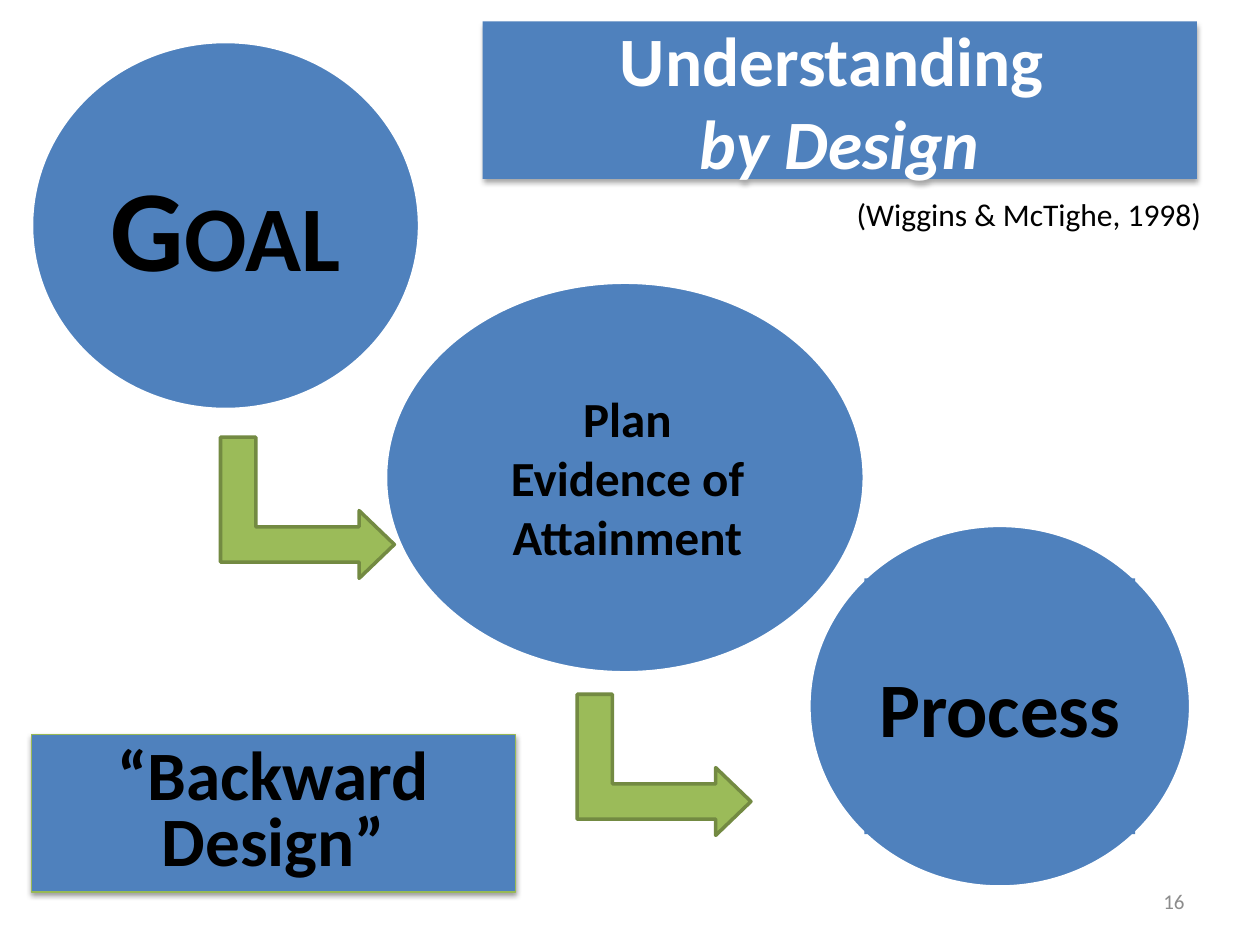
from dataclasses import dataclass
from typing import Optional

from lxml.etree import SubElement
from pptx import Presentation
from pptx.dml.color import RGBColor
from pptx.enum.shapes import MSO_SHAPE
from pptx.enum.text import MSO_ANCHOR, PP_ALIGN
from pptx.oxml.ns import qn
from pptx.util import Inches, Pt


@dataclass(frozen=True)
class Theme:
    font: str = "Calibri"
    blue: str = "4F81BD"
    green: str = "9BBB59"
    edge: str = "738A42"
    rim: str = "98B955"
    white: str = "FFFFFF"
    black: str = "000000"
    gray: str = "8C8C8C"
    goal: float = 66
    step: float = 44
    plan: float = 28
    head: float = 39.6
    cite: float = 18
    page: float = 12


@dataclass(frozen=True)
class Box:
    left: float
    top: float
    width: float
    height: float

    def place(self) -> tuple:
        return tuple(Inches(n) for n in
                     (self.left, self.top, self.width, self.height))


@dataclass(frozen=True)
class Run:
    text: str
    size: float
    color: str = "000000"
    bold: bool = True
    italic: bool = False
    small: bool = False


@dataclass(frozen=True)
class Stage:
    disc: Box
    label: Box
    lines: list
    filled: bool = True


THEME = Theme()
STAGES = [
    Stage(Box(0.25, 0.33, 3.08, 2.92), Box(0.7, 0.76, 2.18, 2.06),
          [[Run("Goal", THEME.goal, small=True)]], filled=False),
    Stage(Box(6.42, 4.17, 3.03, 2.87), Box(6.86, 4.59, 2.15, 2.03),
          [[Run("Process", THEME.step)]]),
    Stage(Box(3.06, 2.24, 3.8, 3.1), Box(3.68, 2.77, 2.6, 2.03),
          [[Run(line, THEME.plan)]
           for line in ("Plan", "Evidence of", "Attainment")]),
]
ARROWS = [Box(1.88, 3.34, 1.12, 1.38), Box(4.71, 5.38, 1.12, 1.38)]


def add_shape(slide, kind, box: Box, fill: Optional[str],
              line: Optional[str] = None, weight: float = 2):
    shape = slide.shapes.add_shape(kind, *box.place())
    shape.shadow.inherit = False
    if fill:
        shape.fill.solid()
        shape.fill.fore_color.rgb = RGBColor.from_string(fill)
    else:
        shape.fill.background()
    if line:
        shape.line.color.rgb = RGBColor.from_string(line)
        shape.line.width = Pt(weight)
    else:
        shape.line.fill.background()
    return shape


def add_shadow(shape, alpha: int, dist: float) -> None:
    """Cast a soft black shadow straight down."""
    effects = shape._element.spPr.find(qn("a:effectLst"))
    outer = SubElement(effects, qn("a:outerShdw"), blurRad=str(Pt(3.1)),
                       dist=str(Pt(dist)), dir="5400000", rotWithShape="0")
    color = SubElement(outer, qn("a:srgbClr"), val=THEME.black)
    SubElement(color, qn("a:alpha"), val=str(alpha * 1000))


def write(shape, lines: list, align=PP_ALIGN.CENTER,
          anchor=MSO_ANCHOR.MIDDLE, inset: Optional[float] = None,
          wrap: bool = True, space: Optional[float] = None) -> None:
    """Fill a shape with paragraphs, each a list of runs."""
    frame = shape.text_frame
    frame.word_wrap = wrap
    frame.vertical_anchor = anchor
    if inset is not None:
        frame.margin_left = frame.margin_right = Inches(inset)
        frame.margin_top = frame.margin_bottom = Inches(inset)
    for i, runs in enumerate(lines):
        para = frame.add_paragraph() if i else frame.paragraphs[0]
        para.alignment = align
        if space:
            para.line_spacing = space
        for item in runs:
            if item is None:
                para.add_line_break()
                continue
            run = para.add_run()
            run.text = item.text
            font = run.font
            font.name, font.size = THEME.font, Pt(item.size)
            font.bold, font.italic = item.bold, item.italic
            font.color.rgb = RGBColor.from_string(item.color)
            if item.small:
                run._r.get_or_add_rPr().set("cap", "small")


def add_stage(slide, stage: Stage) -> None:
    add_shape(slide, MSO_SHAPE.OVAL, stage.disc, THEME.blue, THEME.white)
    label = add_shape(slide, MSO_SHAPE.RECTANGLE, stage.label,
                      THEME.blue if stage.filled else None)
    write(label, stage.lines, inset=0.01)


def add_arrow(slide, box: Box) -> None:
    arrow = add_shape(slide, MSO_SHAPE.BENT_UP_ARROW, box,
                      THEME.green, THEME.edge)
    arrow.rotation = 90
    for i, value in enumerate((0.25, 0.24, 0.25)):
        arrow.adjustments[i] = value


def main() -> None:
    deck = Presentation()
    deck.slide_width, deck.slide_height = Inches(10), Inches(7.5)
    slide = deck.slides.add_slide(deck.slide_layouts[6])

    for stage in STAGES:
        add_stage(slide, stage)

    title = add_shape(slide, MSO_SHAPE.RECTANGLE,
                      Box(3.83, 0.17, 5.67, 1.25), THEME.blue)
    add_shadow(title, 35, 1.8)
    write(title, [[Run("Understanding ", THEME.head, THEME.white), None,
                   Run("by Design", THEME.head, THEME.white, italic=True)]])

    page = slide.shapes.add_textbox(*Box(7.17, 6.95, 2.33, 0.4).place())
    write(page, [[Run("16", THEME.page, THEME.gray, bold=False)]],
          PP_ALIGN.RIGHT)

    for box in ARROWS:
        add_arrow(slide, box)

    motto = add_shape(slide, MSO_SHAPE.RECTANGLE,
                      Box(0.25, 5.83, 3.84, 1.25), THEME.blue, THEME.rim, 0.75)
    add_shadow(motto, 38, 1.6)
    write(motto, [[Run("“Backward Design”", THEME.head)]], space=0.8)

    cite = slide.shapes.add_textbox(*Box(6.7, 1.5, 2.97, 0.4).place())
    write(cite, [[Run("(Wiggins & McTighe, 1998)", THEME.cite, bold=False)]],
          PP_ALIGN.LEFT, MSO_ANCHOR.TOP, wrap=False)

    deck.save("out.pptx")


if __name__ == "__main__":
    main()
